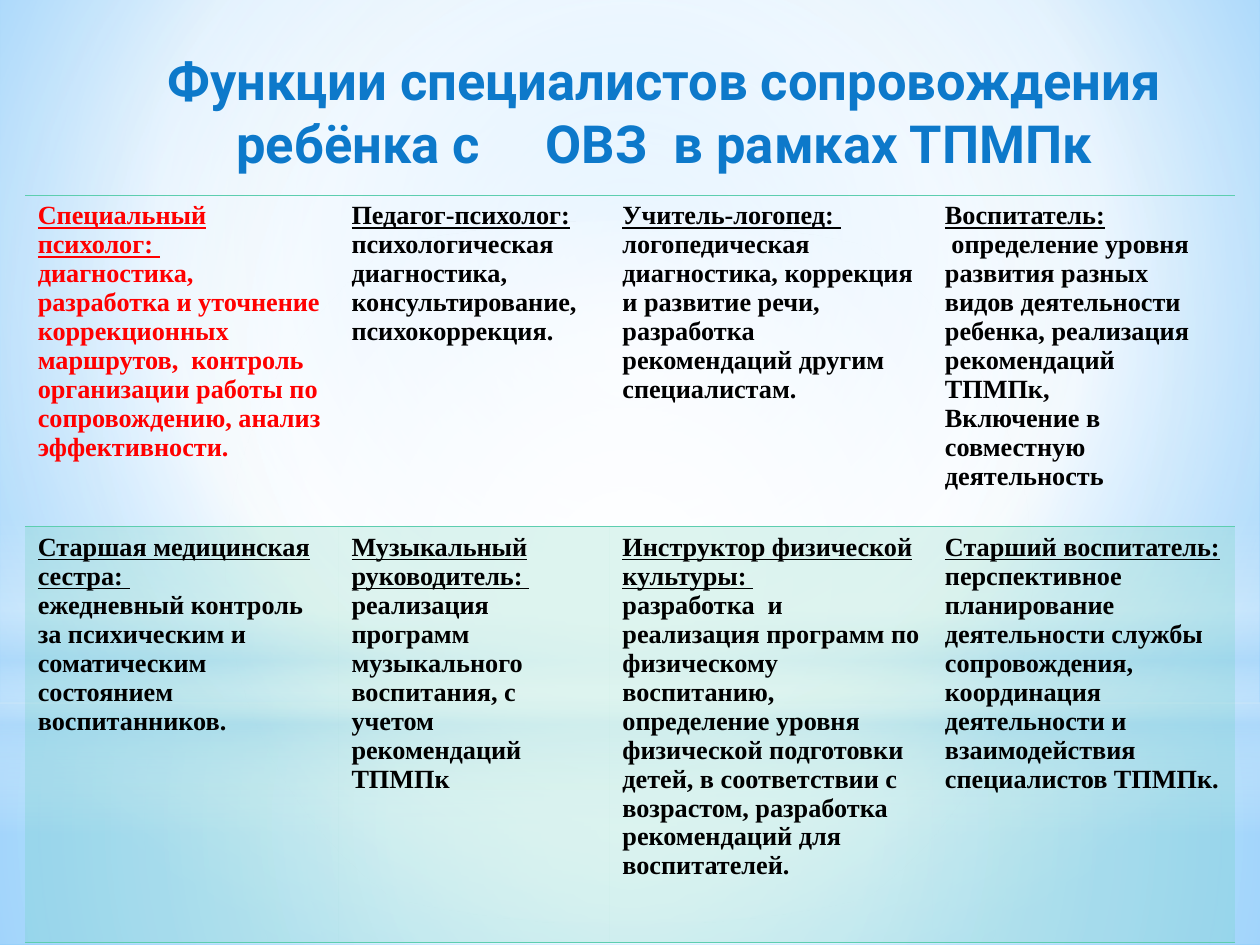
from dataclasses import dataclass

from lxml import etree
from pptx import Presentation
from pptx.dml.color import RGBColor as Color
from pptx.enum.shapes import MSO_SHAPE as Shape
from pptx.enum.text import MSO_ANCHOR as Anchor, PP_ALIGN as Align
from pptx.oxml import parse_xml
from pptx.oxml.ns import nsdecls, qn
from pptx.util import Inches, Pt

COLUMNS, ROWS = 100, 75
NO_STYLE_TABLE = "{2D5ABB26-0587-4C30-8999-92F81FD0307C}"


@dataclass(frozen=True)
class Theme:
    title_font: str = "Roboto"
    body_font: str = "Times New Roman"
    title_size: int = 30
    body_size: int = 15
    title: str = "0D79CA"
    text: str = "000000"
    accent: str = "FF0000"
    mint: str = "5DCEAF"
    white: str = "FFFFFF"
    haze: str = "B4DCFA"
    sky: str = "9ED5FF"
    deep_sky: str = "5BB9FF"


def add_text(para, text, *, font, size, color, underline=False):
    span = para.add_run()
    span.text = text
    span.font.name, span.font.size = font, Pt(size)
    span.font.bold, span.font.underline = True, underline
    span.font.color.rgb = Color.from_string(color)


def gradient(stops, focus=None):
    """Radial fill around focus (left, top, right, bottom), else top to bottom."""
    marks = "".join(
        f'<a:gs pos="{place * 1000}"><a:srgbClr val="{color}">'
        f'<a:alpha val="{opacity * 1000}"/></a:srgbClr></a:gs>'
        for place, color, opacity in stops)
    if focus:
        edges = " ".join(f'{side}="{share * 1000}"' for side, share in zip("ltrb", focus))
        course = f'<a:path path="circle"><a:fillToRect {edges}/></a:path>'
    else:
        course = '<a:lin ang="5400000" scaled="0"/>'
    return parse_xml(f'<a:gradFill {nsdecls("a")} rotWithShape="1">'
                     f'<a:gsLst>{marks}</a:gsLst>{course}</a:gradFill>')


def swap_gradient(holder, fill, new):
    fill.gradient()
    old = holder.find(".//" + qn("a:gradFill"))
    old.getparent().replace(old, new)


class SlideBuilder:
    def __init__(self, deck, theme):
        self.theme = theme
        self.unit_x = deck.slide_width / COLUMNS
        self.unit_y = deck.slide_height / ROWS
        self.slide = deck.slides.add_slide(deck.slide_layouts[6])

    def place(self, left, top, width, height):
        return (self.across(left), self.down(top), self.across(width), self.down(height))

    def across(self, columns):
        return round(columns * self.unit_x)

    def down(self, rows):
        return round(rows * self.unit_y)

    def background(self, stops, focus):
        fill = self.slide.background.fill
        swap_gradient(self.slide.element, fill, gradient(stops, focus))

    def glow(self, kind, area, stops, focus=None):
        shape = self.slide.shapes.add_shape(kind, *self.place(*area))
        shape.shadow.inherit = False
        shape.line.fill.background()
        swap_gradient(shape.element, shape.fill, gradient(stops, focus))

    def title(self, area, text):
        box = self.slide.shapes.add_textbox(*self.place(*area))
        frame = box.text_frame
        frame.word_wrap, frame.vertical_anchor = True, Anchor.MIDDLE
        para = frame.paragraphs[0]
        para.alignment = Align.CENTER
        add_text(para, text, font=self.theme.title_font, size=self.theme.title_size,
                 color=self.theme.title)

    def table(self, left, top, widths, heights, rows):
        area = self.place(left, top, sum(widths), sum(heights))
        table = self.slide.shapes.add_table(len(rows), len(widths), *area).table
        table.first_row = table.horz_banding = False
        table._tbl.tblPr.find(qn("a:tableStyleId")).text = NO_STYLE_TABLE
        for column, width in zip(table.columns, widths):
            column.width = self.across(width)
        for row, height, entries in zip(table.rows, heights, rows):
            row.height = self.down(height)
            for cell, entry in zip(row.cells, entries):
                self.fill_cell(cell, *entry)
        for cell in table.rows[1].cells:
            self.tint(cell, 20)
        for cell in table.iter_cells():
            self.rule(cell)

    def fill_cell(self, cell, headings, duties, color):
        cell.fill.background()
        frame = cell.text_frame
        for index, text in enumerate(headings + duties):
            para = frame.add_paragraph() if index else frame.paragraphs[0]
            add_text(para, text, font=self.theme.body_font, size=self.theme.body_size,
                     color=color, underline=index < len(headings))

    def tint(self, cell, opacity):
        cell.fill.solid()
        cell.fill.fore_color.rgb = Color.from_string(self.theme.mint)
        color = cell._tc.tcPr.find(".//" + qn("a:srgbClr"))
        etree.SubElement(color, qn("a:alpha")).set("val", str(opacity * 1000))

    def rule(self, cell):
        for index, edge in enumerate(("lnT", "lnB")):
            cell._tc.tcPr.insert(index, parse_xml(
                f'<a:{edge} {nsdecls("a")} w="{Pt(1)}"><a:solidFill>'
                f'<a:srgbClr val="{self.theme.mint}"/></a:solidFill></a:{edge}>'))


def main():
    theme = Theme()
    white, haze = theme.white, theme.haze
    deck = Presentation()
    deck.slide_width, deck.slide_height = Inches(10), Inches(7.5)
    page = SlideBuilder(deck, theme)

    # Backdrop of soft light
    centre = (50, 50, 50, 50)
    page.background([(0, theme.sky, 100), (60, white, 100), (100, theme.deep_sky, 100)],
                    (20, 10, 20, 60))
    page.glow(Shape.RECTANGLE, (0, 55.8, COLUMNS, 19.2),
              [(0, white, 91), (37, white, 76), (100, haze, 79)], centre)
    page.glow(Shape.RECTANGLE, (0, 0, COLUMNS, 55.8),
              [(0, white, 89), (48, white, 62), (100, haze, 79)], centre)
    page.glow(Shape.RECTANGLE, (0, 41.2, COLUMNS, 25),
              [(0, white, 0), (29, white, 30), (45, haze, 40), (55, white, 26),
               (65, haze, 60), (100, white, 0)])
    page.glow(Shape.OVAL, (0, 17.5, COLUMNS, 55.8),
              [(0, white, 100), (56, white, 0)], centre)

    # Title
    page.title((5.5, 2.1, 94.5, 13.4),
               "Функции специалистов сопровождения ребёнка с     ОВЗ  в рамках ТПМПк")

    # Specialists: headings, duties, text colour
    specialists = [
        [(["Специальный психолог: "],
          ["диагностика, разработка и уточнение коррекционных маршрутов,  контроль  "
           "организации работы по сопровождению, анализ эффективности."], theme.accent),
         (["Педагог-психолог:"],
          ["психологическая диагностика, консультирование, психокоррекция."], theme.text),
         (["Учитель-логопед: "],
          ["логопедическая диагностика, коррекция и развитие речи, разработка "
           "рекомендаций другим специалистам."], theme.text),
         (["Воспитатель:"],
          [" определение уровня развития разных видов деятельности ребенка, "
           "реализация рекомендаций ТПМПк,",
           "Включение в совместную деятельность"], theme.text)],
        [(["Старшая медицинская сестра: "],
          ["ежедневный контроль за психическим и соматическим состоянием "
           "воспитанников."], theme.text),
         (["Музыкальный руководитель: "],
          ["реализация  программ музыкального воспитания, с учетом рекомендаций "
           "ТПМПк"], theme.text),
         (["Инструктор физической", "культуры: "],
          ["разработка  и реализация программ по физическому воспитанию, определение "
           "уровня физической подготовки детей, в соответствии с возрастом, "
           "разработка рекомендаций для воспитателей."], theme.text),
         (["Старший воспитатель: "],
          ["перспективное планирование деятельности службы сопровождения, координация "
           "деятельности и взаимодействия специалистов ТПМПк."], theme.text)],
    ]
    page.table(2, 15.5, (24.9, 21.5, 25.6, 24), (26.3, 33), specialists)

    deck.save("out.pptx")


if __name__ == "__main__":
    main()
